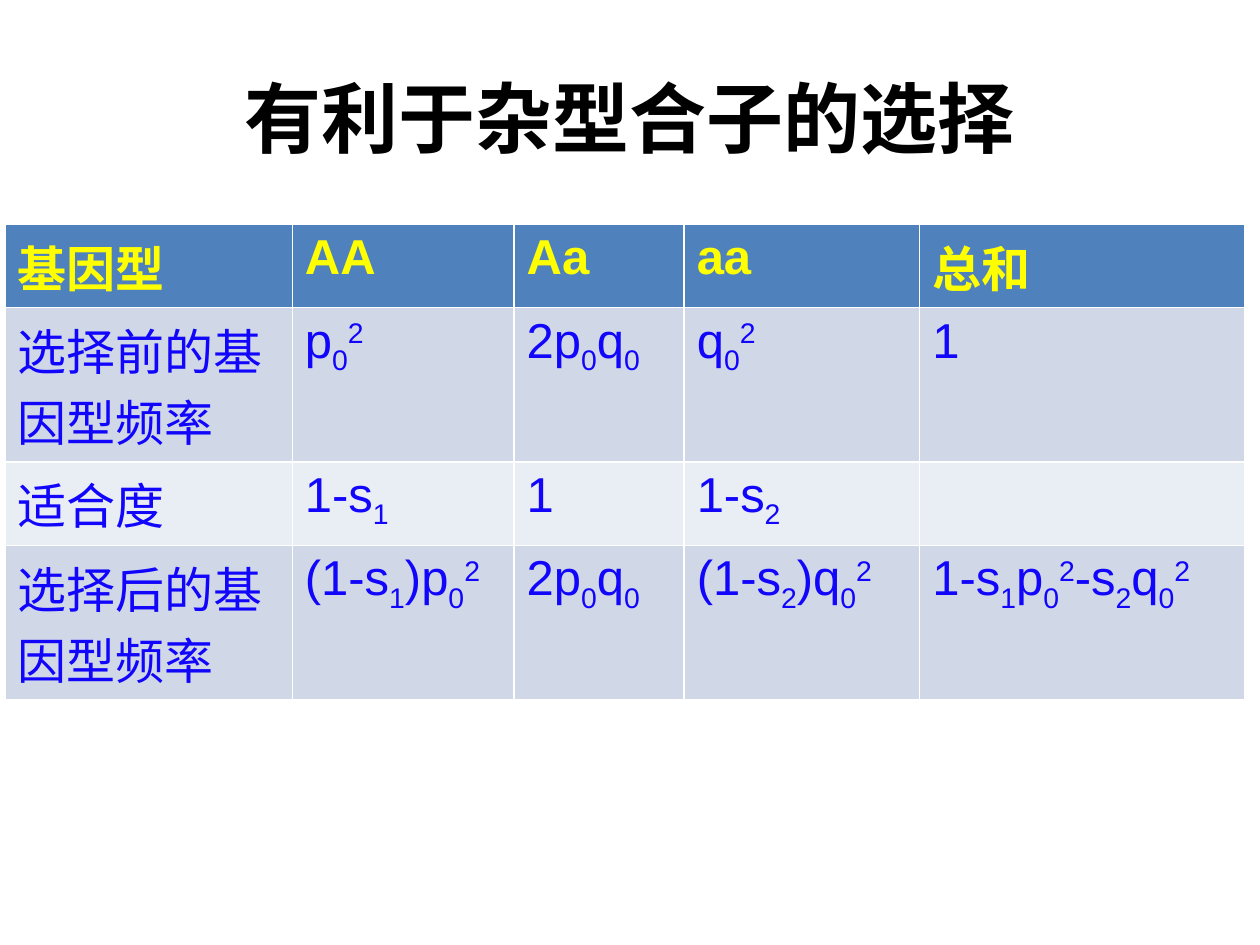
from itertools import groupby

from lxml.etree import SubElement
from pptx import Presentation
from pptx.dml.color import RGBColor
from pptx.enum.text import MSO_ANCHOR, PP_ALIGN
from pptx.oxml.ns import qn
from pptx.util import Inches, Pt

TITLE = "有利于杂型合子的选择"
# "_" lowers the next character, "^" raises it.
GENOTYPES = [
    ["基因型", "AA", "Aa", "aa", "总和"],
    ["选择前的基因型频率", "p_0^2", "2p_0q_0", "q_0^2", "1"],
    ["适合度", "1-s_1", "1", "1-s_2", ""],
    ["选择后的基因型频率", "(1-s_1)p_0^2", "2p_0q_0", "(1-s_2)q_0^2",
     "1-s_1p_0^2-s_2q_0^2"],
]
COLUMN_WIDTHS = [2.28, 1.76, 1.35, 1.87, 2.58]
ONE_LINE, TWO_LINES = 0.57, 1.03
ROW_HEIGHTS = [ONE_LINE, TWO_LINES, ONE_LINE, TWO_LINES]
TABLE_LEFT, TABLE_TOP = 0.04, 1.78

LATIN_FONT, CHINESE_FONT = "Arial", "Noto Sans CJK SC"
HEADER_FILL, BAND_FILLS = "4F81BD", ["E9EDF4", "D0D8E8"]
HEADER_TEXT, BODY_TEXT, TITLE_TEXT = "FFFF00", "1105FB", "000000"
BASELINES = {"_": "-25000", "^": "30000"}


def color(hex_string):
    return RGBColor.from_string(hex_string)


def split_scripts(text):
    """Return (marker, text) pairs; the marker is empty on the baseline."""
    marked, marker = [], ""
    for character in text:
        if character in BASELINES:
            marker = character
        else:
            marked.append((marker, character))
            marker = ""
    return [(key, "".join(character for _, character in group))
            for key, group in groupby(marked, key=lambda pair: pair[0])]


def write(paragraph, text, size, hex_color, bold, font_name):
    for marker, part in split_scripts(text):
        run = paragraph.add_run()
        run.text = part
        run.font.size = Pt(size)
        run.font.bold = bold
        run.font.color.rgb = color(hex_color)
        run.font.name = font_name
        properties = run._r.get_or_add_rPr()
        SubElement(properties, qn("a:ea")).set("typeface", CHINESE_FONT)
        if marker:
            properties.set("baseline", BASELINES[marker])


def add_title(slide):
    title = slide.shapes.title
    title.left, title.top = Inches(0.5), Inches(0.3)
    title.width, title.height = Inches(9), Inches(1.25)
    title.text_frame.vertical_anchor = MSO_ANCHOR.MIDDLE
    paragraph = title.text_frame.paragraphs[0]
    paragraph.alignment = PP_ALIGN.CENTER
    write(paragraph, TITLE, 44, TITLE_TEXT, True, CHINESE_FONT)


def add_genotype_table(slide):
    table = slide.shapes.add_table(
        len(ROW_HEIGHTS), len(COLUMN_WIDTHS),
        Inches(TABLE_LEFT), Inches(TABLE_TOP),
        Inches(sum(COLUMN_WIDTHS)), Inches(sum(ROW_HEIGHTS))).table
    for column, width in zip(table.columns, COLUMN_WIDTHS):
        column.width = Inches(width)
    for row, height in zip(table.rows, ROW_HEIGHTS):
        row.height = Inches(height)
    for row_index, texts in enumerate(GENOTYPES):
        is_header = row_index == 0
        fill = HEADER_FILL if is_header else BAND_FILLS[row_index % 2]
        text_color = HEADER_TEXT if is_header else BODY_TEXT
        for column_index, text in enumerate(texts):
            cell = table.cell(row_index, column_index)
            cell.fill.solid()
            cell.fill.fore_color.rgb = color(fill)
            write(cell.text_frame.paragraphs[0], text, 28, text_color,
                  is_header, LATIN_FONT)


def main():
    presentation = Presentation()
    presentation.slide_width = Inches(10)
    presentation.slide_height = Inches(7.5)
    slide = presentation.slides.add_slide(presentation.slide_layouts[5])
    add_title(slide)
    add_genotype_table(slide)
    presentation.save("out.pptx")


if __name__ == "__main__":
    main()
